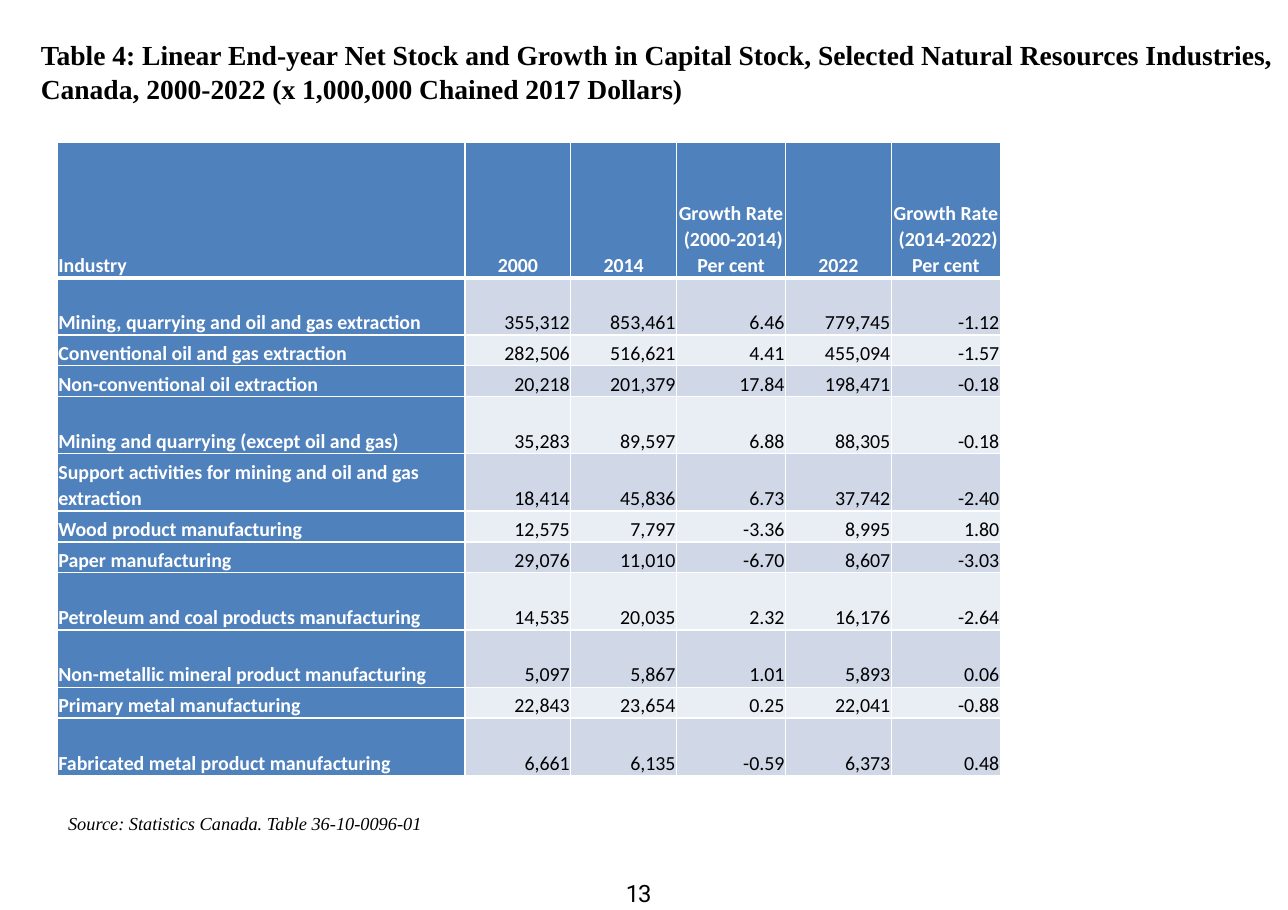
import pptx
import pptx.dml.color
import pptx.enum.text
import pptx.oxml
import pptx.oxml.ns
import pptx.util
from pptx.util import Inches

ALIGN = pptx.enum.text.PP_ALIGN
ANCHOR = pptx.enum.text.MSO_ANCHOR
AUTO_SIZE = pptx.enum.text.MSO_AUTO_SIZE

BLACK, WHITE = "000000", "FFFFFF"
BLUE, BAND_DARK, BAND_LIGHT = "4F81BD", "D0D8E8", "E9EDF4"

TITLE = (
    "Table 4: Linear End-year Net Stock and Growth in Capital Stock, "
    "Selected Natural Resources Industries, Canada, 2000-2022 "
    "(x 1,000,000 Chained 2017 Dollars)"
)
COLUMN_WIDTHS = [3.7, 0.96, 0.96, 0.99, 0.96, 0.99]
HEADER_HEIGHT, TALL, SHORT = 1.23, 0.52, 0.28
HEADER = ["Industry", "2000", "2014", "Growth Rate\n (2000-2014)\nPer cent",
          "2022", "Growth Rate\n (2014-2022)\nPer cent"]
INDUSTRIES = [
    (TALL, "Mining, quarrying and oil and gas extraction",
     "355,312", "853,461", "6.46", "779,745", "-1.12"),
    (SHORT, "Conventional oil and gas extraction",
     "282,506", "516,621", "4.41", "455,094", "-1.57"),
    (SHORT, "Non-conventional oil extraction",
     "20,218", "201,379", "17.84", "198,471", "-0.18"),
    (TALL, "Mining and quarrying (except oil and gas)",
     "35,283", "89,597", "6.88", "88,305", "-0.18"),
    (TALL, "Support activities for mining and oil and gas extraction",
     "18,414", "45,836", "6.73", "37,742", "-2.40"),
    (SHORT, "Wood product manufacturing",
     "12,575", "7,797", "-3.36", "8,995", "1.80"),
    (SHORT, "Paper manufacturing",
     "29,076", "11,010", "-6.70", "8,607", "-3.03"),
    (TALL, "Petroleum and coal products manufacturing",
     "14,535", "20,035", "2.32", "16,176", "-2.64"),
    (TALL, "Non-metallic mineral product manufacturing",
     "5,097", "5,867", "1.01", "5,893", "0.06"),
    (SHORT, "Primary metal manufacturing",
     "22,843", "23,654", "0.25", "22,041", "-0.88"),
    (TALL, "Fabricated metal product manufacturing",
     "6,661", "6,135", "-0.59", "6,373", "0.48"),
]


def rgb(value):
    return pptx.dml.color.RGBColor.from_string(value)


def write(tf, text, *, size, font, color=BLACK, bold=False, italic=False,
          align=ALIGN.LEFT, line=1.0, before=0, after=0, indent=0, tracking=0):
    """Fill the first paragraph; a newline in the text is a line break."""
    p = tf.paragraphs[0]
    p.text = text
    p.alignment = align
    p.line_spacing = line
    p.space_before = pptx.util.Pt(before)
    p.space_after = pptx.util.Pt(after)
    if indent:
        p._p.get_or_add_pPr().set("marL", str(Inches(indent)))
    for r in p.runs:
        r.font.size = pptx.util.Pt(size)
        r.font.name = font
        r.font.bold = bold
        r.font.italic = italic
        r.font.color.rgb = rgb(color)
        if tracking:
            r._r.get_or_add_rPr().set("spc", str(round(tracking * 100)))


def set_frame(tf, margins):
    tf.word_wrap = True
    tf.auto_size = AUTO_SIZE.NONE
    tf.vertical_anchor = ANCHOR.TOP
    (tf.margin_left, tf.margin_top,
     tf.margin_right, tf.margin_bottom) = map(Inches, margins)


def add_title(s, text):
    sp = s.shapes.title
    sp.left, sp.top, sp.width, sp.height = map(Inches, (0.35, 0.33, 11.34, 1.06))
    set_frame(sp.text_frame, (0, 0.01, 0, 0))
    write(sp.text_frame, text, size=18, font="Times New Roman", bold=True,
          line=1.03, before=0.7, after=11.3, indent=0.02)


def add_text(s, box, text, margins=(0, 0, 0, 0), **fmt):
    tf = s.shapes.add_textbox(*map(Inches, box)).text_frame
    set_frame(tf, margins)
    write(tf, text, **fmt)


def set_borders(cell, top, bottom):
    """Draw white borders, with the top and bottom widths in points."""
    tc_pr = cell._tc.get_or_add_tcPr()
    for side, width in (("L", 1), ("R", 1), ("T", top), ("B", bottom)):
        tc_pr.append(pptx.oxml.parse_xml(
            f'<a:ln{side} {pptx.oxml.ns.nsdecls("a")} w="{pptx.util.Pt(width)}">'
            f'<a:solidFill><a:srgbClr val="{WHITE}"/></a:solidFill></a:ln{side}>'))


def format_cell(cell, text, row, col):
    label = row == 0 or col == 0
    if col == 0:
        align = ALIGN.LEFT
    else:
        align = ALIGN.CENTER if row == 0 else ALIGN.RIGHT
    set_borders(cell, top=3 if row == 1 else 1, bottom=3 if row == 0 else 1)
    cell.fill.solid()
    cell.fill.fore_color.rgb = rgb(
        BLUE if label else BAND_DARK if row % 2 else BAND_LIGHT)
    cell.vertical_anchor = ANCHOR.BOTTOM
    cell.margin_left = cell.margin_right = Inches(0.01)
    cell.margin_top = cell.margin_bottom = 0
    write(cell.text_frame, text, size=13, font="Calibri", bold=label,
          color=WHITE if label else BLACK, align=align, line=1.07, after=8)


def add_stock_table(s):
    rows = [(HEADER_HEIGHT, *HEADER), *INDUSTRIES]
    table = s.shapes.add_table(
        len(rows), len(COLUMN_WIDTHS), Inches(0.52), Inches(1.29),
        Inches(sum(COLUMN_WIDTHS)), Inches(sum(r[0] for r in rows))).table
    for column, width in zip(table.columns, COLUMN_WIDTHS):
        column.width = Inches(width)
    for i, (height, *texts) in enumerate(rows):
        table.rows[i].height = Inches(height)
        for j, text in enumerate(texts):
            format_cell(table.cell(i, j), text, i, j)


def main():
    prs = pptx.Presentation()
    prs.slide_width, prs.slide_height = Inches(11.69), Inches(8.26)
    s = prs.slides.add_slide(prs.slide_layouts[5])
    add_title(s, TITLE)
    add_text(s, (5.6, 7.98, 0.34, 0.26), "13", size=15.6, font="Roboto",
             before=0.5, indent=0.08, tracking=-0.7)
    add_stock_table(s)
    add_text(s, (0.52, 7.31, 6.06, 0.31),
             "Source: Statistics Canada. Table 36-10-0096-01",
             margins=(0.1, 0.05, 0.1, 0.05), size=12, font="Times New Roman",
             italic=True, line=1.07, after=8)
    prs.save("out.pptx")


if __name__ == "__main__":
    main()
